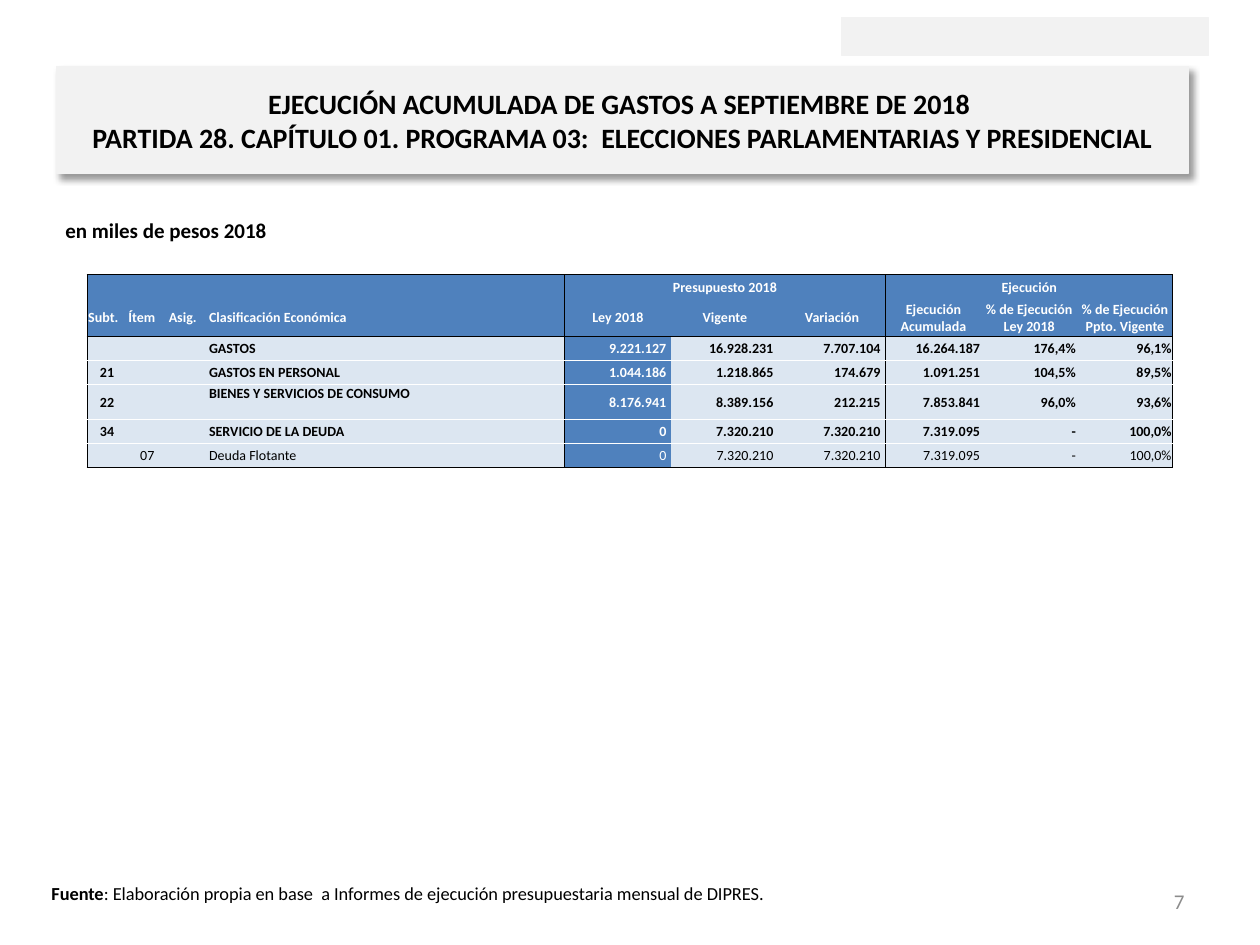
from dataclasses import dataclass
from typing import Any

from lxml import etree
from pptx import Presentation
from pptx import util as u
from pptx.dml.color import RGBColor
from pptx.enum import shapes, text
from pptx.oxml.ns import qn

BLACK = RGBColor(0x00, 0x00, 0x00)
WHITE = RGBColor(0xFF, 0xFF, 0xFF)
BLUE = RGBColor(0x4F, 0x81, 0xBD)
PALE_BLUE = RGBColor(0xDC, 0xE6, 0xF1)
GREY = RGBColor(0x8C, 0x8C, 0x8C)
PANEL = RGBColor(0xF2, 0xF2, 0xF2)

Align = text.PP_ALIGN
Anchor = text.MSO_ANCHOR

COLUMN_WIDTHS = [0.32, 0.32, 0.32, 2.83, 0.85, 0.85, 0.85, 0.76, 0.76, 0.76]
ROW_HEIGHTS = [0.19, 0.3, 0.19, 0.19, 0.28, 0.19, 0.19]
ROWS = [
    ["", "", "", "", "Presupuesto 2018", "", "", "Ejecución", "", ""],
    ["Subt.", "Ítem", "Asig.", "Clasificación Económica", "Ley 2018", "Vigente", "Variación",
     "Ejecución Acumulada", "% de Ejecución Ley 2018", "% de Ejecución Ppto. Vigente"],
    ["", "", "", "GASTOS", "9.221.127", "16.928.231", "7.707.104", "16.264.187", "176,4%", "96,1%"],
    ["21", "", "", "GASTOS EN PERSONAL", "1.044.186", "1.218.865", "174.679",
     "1.091.251", "104,5%", "89,5%"],
    ["22", "", "", "BIENES Y SERVICIOS DE CONSUMO", "8.176.941", "8.389.156", "212.215",
     "7.853.841", "96,0%", "93,6%"],
    ["34", "", "", "SERVICIO DE LA DEUDA", "0", "7.320.210", "7.320.210",
     "7.319.095", "-", "100,0%"],
    ["", "07", "", "Deuda Flotante", "0", "7.320.210", "7.320.210", "7.319.095", "-", "100,0%"],
]
HEADER_ROWS = 2
NAME_COLUMN = 3
LAW_COLUMN = 4
BUDGET_COLUMNS = range(4, 7)
GROUP_STARTS = (0, 4, 7)
GROUP_ENDS = (3, 6, 9)
LAST_ROW = len(ROWS) - 1
CONSUMPTION_ROW = 4


@dataclass
class Run:
    words: str
    size: float
    color: RGBColor
    bold: bool = True


@dataclass
class Label:
    left: float
    top: float
    width: float
    height: float
    runs: list[Run]
    align: Any = Align.LEFT
    anchor: Any = Anchor.TOP


LABELS = [
    Label(0.31, 6.95, 9.19, 0.4,
          [Run("Fuente", 10.5, BLACK),
           Run(": Elaboración propia en base  a Informes de ejecución presupuestaria "
               "mensual de DIPRES.", 10.5, BLACK, False)]),
    Label(7.17, 6.95, 2.33, 0.4, [Run("7", 12, GREY, False)], Align.RIGHT, Anchor.MIDDLE),
    Label(0.42, 1.68, 9, 0.5, [Run("en miles de pesos 2018", 12, BLACK)]),
]


def apply(target: Any, values: dict[str, Any]) -> None:
    for name, value in values.items():
        setattr(target, name, value)


def write(paragraph: Any, runs: list[Run], align: Any) -> None:
    paragraph.alignment = align
    for item in runs:
        run = paragraph.add_run()
        run.text = item.words
        apply(run.font, {"name": "Calibri", "size": u.Pt(item.size), "bold": item.bold})
        run.font.color.rgb = item.color


def draw_label(slide: Any, label: Label) -> None:
    shape = slide.shapes.add_textbox(u.Inches(label.left), u.Inches(label.top),
                                     u.Inches(label.width), u.Inches(label.height))
    apply(shape.text_frame, {"word_wrap": True, "vertical_anchor": label.anchor})
    write(shape.text_frame.paragraphs[0], label.runs, label.align)


def draw_panel(slide: Any, left: float, top: float, width: float, height: float) -> Any:
    shape = slide.shapes.add_shape(shapes.MSO_SHAPE.RECTANGLE, u.Inches(left), u.Inches(top),
                                   u.Inches(width), u.Inches(height))
    shape.shadow.inherit = False
    shape.fill.solid()
    shape.fill.fore_color.rgb = PANEL
    shape.line.color.rgb = PANEL
    shape.line.width = u.Pt(0.75)
    return shape


def draw_title(slide: Any) -> None:
    shape = draw_panel(slide, 0.45, 0.53, 8.98, 0.85)
    effects = shape._element.spPr.find(qn("a:effectLst"))
    shadow = etree.SubElement(effects, qn("a:outerShdw"), blurRad=str(u.Pt(4)),
                              dist=str(u.Pt(3)), dir="2700000", algn="tl", rotWithShape="0")
    color = etree.SubElement(shadow, qn("a:srgbClr"), val=str(BLACK))
    etree.SubElement(color, qn("a:alpha"), val="40000")
    apply(shape.text_frame, {
        "word_wrap": True, "vertical_anchor": Anchor.MIDDLE,
        "margin_left": u.Inches(0.11), "margin_right": u.Inches(0.11),
        "margin_top": u.Inches(0.05), "margin_bottom": u.Inches(0.05)})
    paragraph = shape.text_frame.paragraphs[0]
    write(paragraph, [Run("EJECUCIÓN ACUMULADA DE GASTOS A SEPTIEMBRE DE 2018 ", 16, BLACK)],
          Align.CENTER)
    paragraph.add_line_break()
    write(paragraph, [Run("PARTIDA 28. CAPÍTULO 01. PROGRAMA 03:  "
                          "ELECCIONES PARLAMENTARIAS Y PRESIDENCIAL", 16, BLACK)], Align.CENTER)


def cell_borders(row: int, column: int) -> dict[str, RGBColor | None]:
    body = row >= HEADER_ROWS
    top = BLACK if row in (0, HEADER_ROWS) else WHITE if body else None
    bottom = BLACK if row in (HEADER_ROWS - 1, LAST_ROW) else WHITE if body else None
    merged = row == 0 and column in GROUP_STARTS[1:]
    return {"lnL": BLACK if column in GROUP_STARTS else None,
            "lnR": BLACK if merged or column in GROUP_ENDS else None,
            "lnT": top, "lnB": bottom}


def set_borders(cell: Any, borders: dict[str, RGBColor | None]) -> None:
    properties = cell._tc.get_or_add_tcPr()
    for edge, color in borders.items():
        line = etree.SubElement(properties, qn(f"a:{edge}"), w=str(u.Pt(0.5)))
        if color is None:
            etree.SubElement(line, qn("a:noFill"))
        else:
            fill = etree.SubElement(line, qn("a:solidFill"))
            etree.SubElement(fill, qn("a:srgbClr"), val=str(color))


def cell_align(row: int, column: int) -> Any:
    if row < HEADER_ROWS:
        return Align.LEFT if column <= NAME_COLUMN else Align.CENTER
    if column < NAME_COLUMN:
        return Align.CENTER
    return Align.JUSTIFY if column == NAME_COLUMN else Align.RIGHT


def draw_cell(cell: Any, row: int, column: int, words: str) -> None:
    header = row < HEADER_ROWS
    blue = header or column == LAW_COLUMN
    at_top = (row, column) == (CONSUMPTION_ROW, NAME_COLUMN)
    padded = not header and column in BUDGET_COLUMNS
    apply(cell, {"margin_left": u.Inches(0.01), "margin_top": u.Inches(0.01), "margin_bottom": 0,
                 "margin_right": u.Inches(0.04 if padded else 0.01),
                 "vertical_anchor": Anchor.TOP if at_top else Anchor.MIDDLE})
    set_borders(cell, cell_borders(row, column))
    cell.fill.solid()
    cell.fill.fore_color.rgb = BLUE if blue else PALE_BLUE
    paragraph = cell.text_frame.paragraphs[0]
    if words:
        run = Run(words, 8, WHITE if blue else BLACK, row != LAST_ROW)
        write(paragraph, [run], cell_align(row, column))
    else:
        etree.SubElement(paragraph._p, qn("a:endParaRPr"), sz="800")


def draw_table(slide: Any) -> None:
    table = slide.shapes.add_table(len(ROWS), len(COLUMN_WIDTHS), u.Inches(0.69), u.Inches(2.18),
                                   u.Inches(sum(COLUMN_WIDTHS)),
                                   u.Inches(sum(ROW_HEIGHTS))).table
    apply(table, {"first_row": False, "horz_banding": False})
    for column, width in zip(table.columns, COLUMN_WIDTHS):
        column.width = u.Inches(width)
    for row, height in zip(table.rows, ROW_HEIGHTS):
        row.height = u.Inches(height)
    for row, values in enumerate(ROWS):
        for column, words in enumerate(values):
            draw_cell(table.cell(row, column), row, column, words)
    for start, end in zip(GROUP_STARTS[1:], GROUP_ENDS[1:]):
        table.cell(0, start).merge(table.cell(0, end))


def main() -> None:
    presentation = Presentation()
    apply(presentation, {"slide_width": u.Inches(10), "slide_height": u.Inches(7.5)})
    slide = presentation.slides.add_slide(presentation.slide_layouts[6])
    draw_panel(slide, 6.68, 0.14, 2.91, 0.3)
    for label in LABELS:
        draw_label(slide, label)
    draw_title(slide)
    draw_table(slide)
    presentation.save("out.pptx")


if __name__ == "__main__":
    main()
